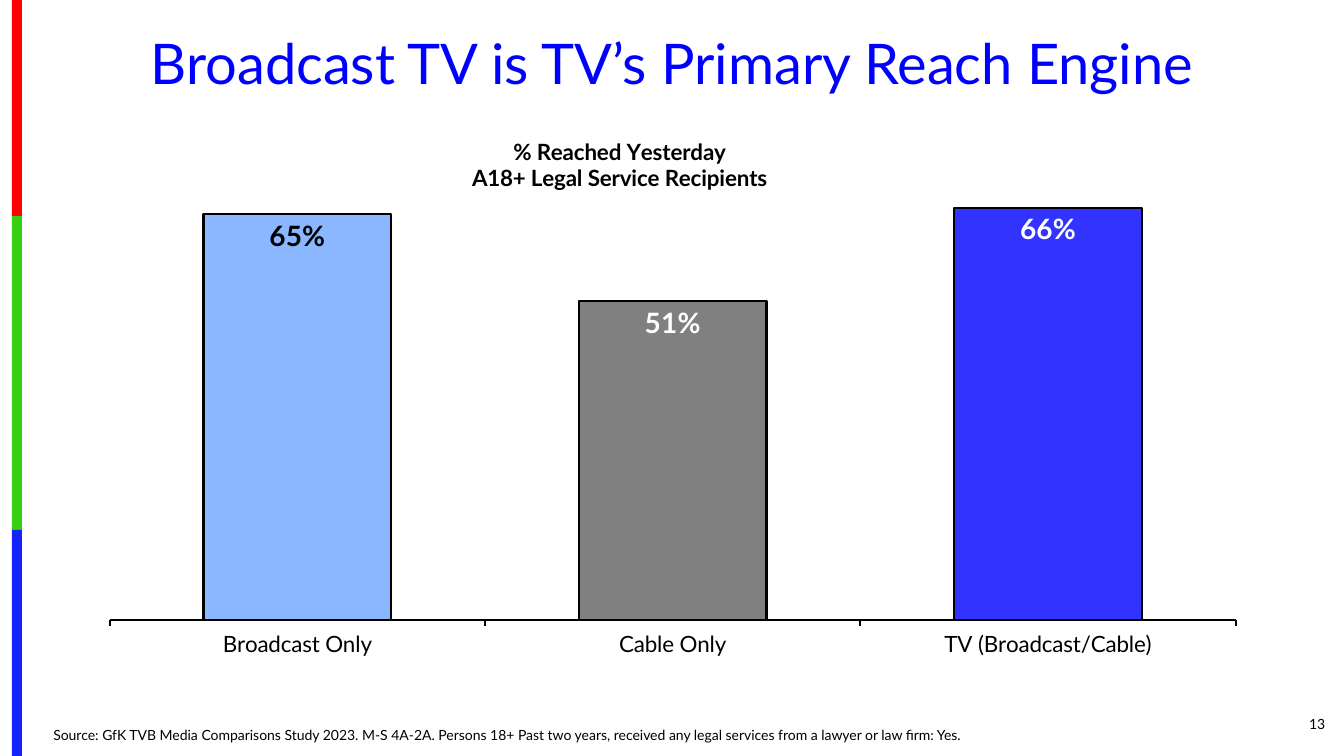
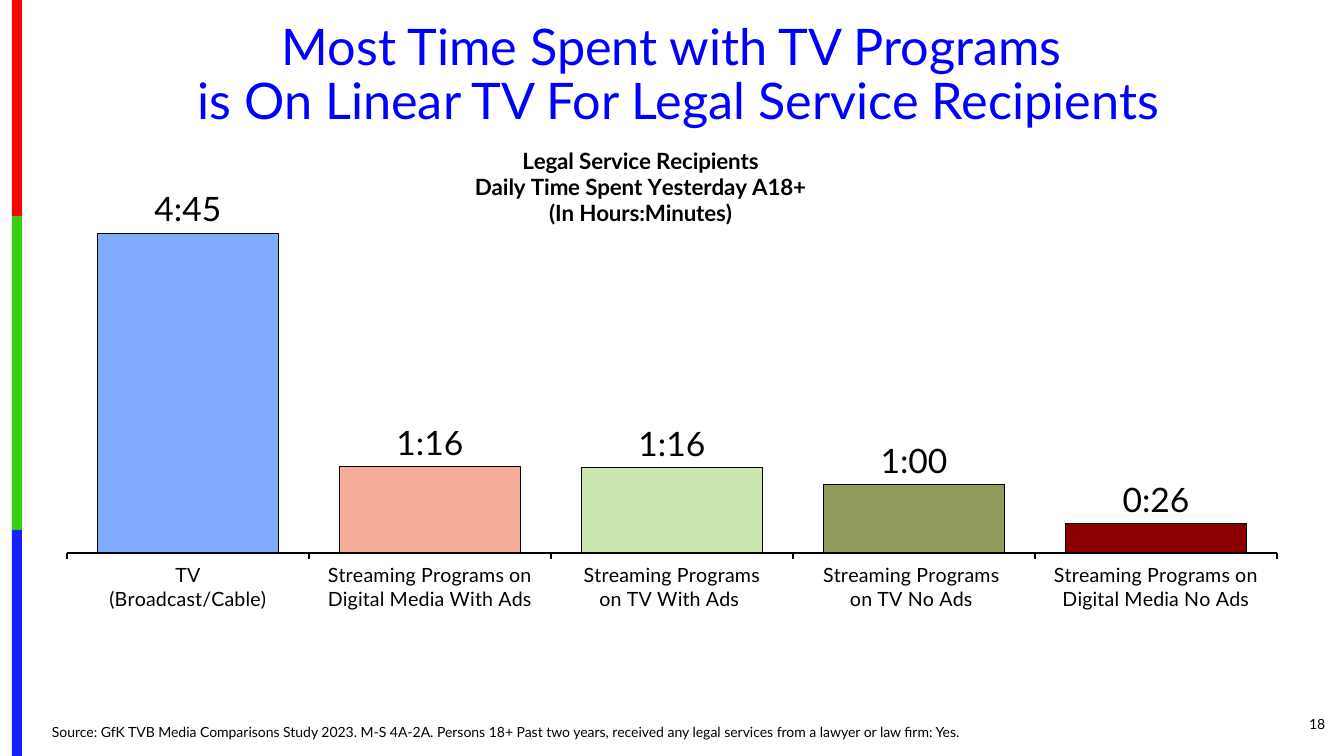
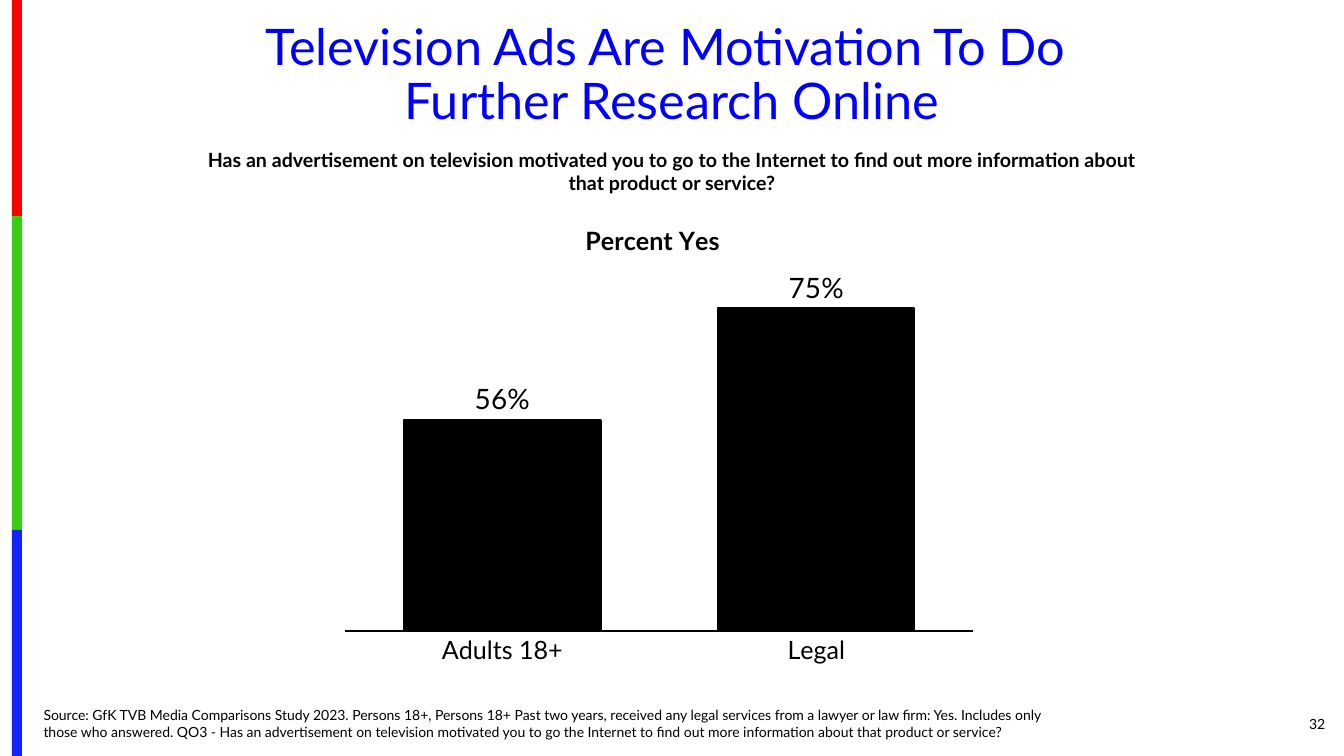
from dataclasses import dataclass

from pptx import Presentation
from pptx.chart.data import CategoryChartData
from pptx.dml.color import RGBColor
from pptx.enum.chart import XL_CHART_TYPE, XL_LABEL_POSITION, XL_TICK_MARK
from pptx.enum.shapes import MSO_SHAPE
from pptx.enum.text import MSO_ANCHOR, PP_ALIGN
from pptx.oxml import parse_xml
from pptx.oxml.ns import nsdecls, qn
from pptx.util import Pt


@dataclass(frozen=True)
class Theme:
    font: str = "Lato"
    title: str = "0000FF"
    ink: str = "000000"
    white: str = "FFFFFF"
    bands: tuple = (("FE0000", 154.5), ("36CF12", 224), ("1322FE", 161.5))
    small: int = 10
    question: int = 14
    chart_title: int = 16
    label: int = 20


theme = Theme()


def write(frame, text, size=theme.small, color=theme.ink, bold=False,
          align=PP_ALIGN.LEFT, anchor=None, spacing=None):
    frame.text = text
    if anchor is not None:
        frame.word_wrap = True
        frame.vertical_anchor = anchor
    for paragraph in frame.paragraphs:
        paragraph.alignment = align
        paragraph.line_spacing = spacing
        for run in paragraph.runs:
            run.font.name = theme.font
            run.font.size = Pt(size)
            run.font.bold = bold
            run.font.color.rgb = RGBColor.from_string(color)


def set_layout(parent, target, **percents):
    layout = parent.find(qn("c:layout"))
    if layout is None:
        layout = parse_xml(f"<c:layout {nsdecls('c')}/>")
        parent.insert(0, layout)
    inner = '<c:layoutTarget val="inner"/>' if target == "inner" else ""
    modes = "".join(f'<c:{key}Mode val="edge"/>' for key in ("x", "y"))
    values = "".join(f'<c:{key} val="{value / 100:.3f}"/>' for key, value in percents.items())
    layout.append(parse_xml(
        f"<c:manualLayout {nsdecls('c')}>{inner}{modes}{values}</c:manualLayout>"))


legal_source = ("Source: GfK TVB Media Comparisons Study 2023. M-S 4A-2A. Persons 18+ Past two years, "
                "received any legal services from a lawyer or law firm: Yes.")
two_line_title = (33, 12, 894, 85.5)

pages = [
    dict(
        number=13, title="Broadcast TV is TV’s Primary Reach Engine",
        title_size=40, title_box=(33, 22.5, 894, 51),
        source=legal_source, source_box=(31, 516.75, 767.5, 18), source_spacing=0.9,
        chart_box=(49, 70.5, 864, 422.5),
        chart_title="% Reached Yesterday\nA18+ Legal Service Recipients",
        chart_title_size=theme.chart_title, chart_title_place=(33.1, 5.9),
        plot=(3.4, 14.2, 93.1, 74), gap=100, scale=(0, 0.7),
        bars=[("Broadcast Only", 0.65, "8AB7FF"), ("Cable Only", 0.51, "808080"),
              ("TV (Broadcast/Cable)", 0.66, "3333FF")],
        number_format="0%", outline=1.5, tick=XL_TICK_MARK.OUTSIDE, category_size=16,
        label_size=theme.label, label_colors=(theme.ink, theme.white, theme.white),
        label_bold=True, label_position=XL_LABEL_POSITION.INSIDE_END),
    dict(
        number=18,
        title="Most Time Spent with TV Programs\v is On Linear TV For Legal Service Recipients",
        title_size=36, title_box=two_line_title,
        source=legal_source, source_box=(30, 514.75, 768, 18), source_spacing=0.9,
        chart_box=(39, 84, 882, 392.5),
        chart_title="Legal Service Recipients\nDaily Time Spent Yesterday A18+\n(In Hours:Minutes)",
        chart_title_size=theme.chart_title, chart_title_place=(33.8, 4.5),
        plot=(1, 6, 98, 73.2), gap=34, scale=(0, 0.25),
        bars=[("TV\n(Broadcast/Cable)", 0.198611, "80ABFF"),
              ("Streaming Programs on Digital Media With Ads", 0.053472, "F5AD99"),
              ("Streaming Programs\non TV With Ads ", 0.052778, "CCE6B2"),
              ("Streaming Programs \non TV No Ads ", 0.042361, "909C5E"),
              ("Streaming Programs on Digital Media No Ads", 0.018056, "8A0000")],
        number_format="h:mm;@", outline=0.75, tick=XL_TICK_MARK.OUTSIDE, category_size=14,
        label_size=24, label_colors=(theme.ink,) * 5,
        label_bold=False, label_position=XL_LABEL_POSITION.OUTSIDE_END),
    dict(
        number=32, title="Television Ads Are Motivation To Do \vFurther Research Online",
        title_size=36, title_box=two_line_title,
        source="Source: GfK TVB Media Comparisons Study 2023. Persons 18+, Persons 18+ Past two years, "
               "received any legal services from a lawyer or law firm: Yes. Includes only those who "
               "answered. QO3 - Has an advertisement on television motivated you to go the Internet "
               "to find out more information about that product or service?",
        source_box=(24, 500.5, 732, 32), source_spacing=1.0,
        question="Has an advertisement on television motivated you to go to the Internet to find out "
                 "more information about that product or service?",
        chart_box=(246, 146, 450, 363), chart_title="Percent Yes",
        chart_title_size=18, chart_title_place=(37.5, 2.6),
        plot=(0, 14.7, 100, 69.2), gap=60, scale=(0.2, 0.8),
        bars=[("Adults 18+", 0.56, theme.ink), ("Legal", 0.75, theme.ink)],
        number_format="0%", outline=1.5, tick=XL_TICK_MARK.NONE, category_size=18,
        label_size=theme.label, label_colors=(theme.ink,) * 2,
        label_bold=False, label_position=XL_LABEL_POSITION.OUTSIDE_END),
]

presentation = Presentation()
presentation.slide_width, presentation.slide_height = Pt(960), Pt(540)
title_only = presentation.slide_layouts[5]
slides = [presentation.slides.add_slide(title_only) for page in pages]

band_top = 0
for index, (color, height) in enumerate(theme.bands):
    band = slides[0].shapes.add_shape(
        MSO_SHAPE.RECTANGLE, Pt(8.5), Pt(band_top), Pt(7.2), Pt(height))
    band.shadow.inherit = False
    band.fill.solid()
    band.fill.fore_color.rgb = RGBColor.from_string(color)
    band.line.fill.background()
    band.name = f"Band {index + 1}"
    band.element.find(".//" + qn("p:cNvPr")).set("id", str(101 + index))
    presentation.slide_master.shapes.element.append(band.element)
    band_top += height

for slide, page in zip(slides, pages):
    title = slide.shapes.title
    title.left, title.top, title.width, title.height = map(Pt, page["title_box"])
    write(title.text_frame, page["title"], size=page["title_size"], color=theme.title,
          align=PP_ALIGN.CENTER, anchor=MSO_ANCHOR.TOP, spacing=0.9)

    number = slide.shapes.add_textbox(Pt(876.25), Pt(502.5), Pt(77.5), Pt(29))
    write(number.text_frame, str(page["number"]), align=PP_ALIGN.RIGHT, anchor=MSO_ANCHOR.MIDDLE)

    source = slide.shapes.add_textbox(*map(Pt, page["source_box"]))
    write(source.text_frame, page["source"], anchor=MSO_ANCHOR.BOTTOM,
          spacing=page["source_spacing"])

    if "question" in page:
        question = slide.shapes.add_textbox(Pt(135), Pt(102), Pt(690), Pt(41))
        write(question.text_frame, page["question"], size=theme.question, bold=True,
              align=PP_ALIGN.CENTER, anchor=MSO_ANCHOR.TOP)

    categories, values, colors = zip(*page["bars"])
    chart_data = CategoryChartData(number_format=page["number_format"])
    chart_data.categories = categories
    chart_data.add_series("Series 1", values)
    chart = slide.shapes.add_chart(
        XL_CHART_TYPE.COLUMN_CLUSTERED, *map(Pt, page["chart_box"]), chart_data).chart
    chart.has_legend = False
    chart.font.name = theme.font
    chart.font.size = Pt(theme.small)
    chart.font.color.rgb = RGBColor.from_string(theme.ink)

    chart.has_title = True
    write(chart.chart_title.text_frame, page["chart_title"], size=page["chart_title_size"],
          bold=True, align=PP_ALIGN.CENTER)
    left, top = page["chart_title_place"]
    set_layout(chart.chart_title.element, "outer", x=left, y=top)
    left, top, width, height = page["plot"]
    set_layout(chart.element.find(".//" + qn("c:plotArea")), "inner",
               x=left, y=top, w=width, h=height)

    value_axis = chart.value_axis
    value_axis.visible = False
    value_axis.has_major_gridlines = False
    value_axis.minimum_scale, value_axis.maximum_scale = page["scale"]
    category_axis = chart.category_axis
    category_axis.major_tick_mark = page["tick"]
    category_axis.format.line.width = Pt(1.5)
    category_axis.format.line.color.rgb = RGBColor.from_string(theme.ink)
    category_axis.tick_labels.font.name = theme.font
    category_axis.tick_labels.font.size = Pt(page["category_size"])
    category_axis.tick_labels.font.color.rgb = RGBColor.from_string(theme.ink)

    plot = chart.plots[0]
    plot.gap_width = page["gap"]
    plot.vary_by_categories = False
    series = plot.series[0]
    labels = series.data_labels
    labels.show_value = True
    labels.number_format = page["number_format"]
    labels.number_format_is_linked = False
    labels.position = page["label_position"]
    for index, (color, label_color) in enumerate(zip(colors, page["label_colors"])):
        point = series.points[index]
        point.format.fill.solid()
        point.format.fill.fore_color.rgb = RGBColor.from_string(color)
        point.format.line.width = Pt(page["outline"])
        point.format.line.color.rgb = RGBColor.from_string(theme.ink)
        label = point.data_label
        label.position = page["label_position"]
        label.font.name = theme.font
        label.font.size = Pt(page["label_size"])
        label.font.bold = page["label_bold"]
        label.font.color.rgb = RGBColor.from_string(label_color)

presentation.save("out.pptx")
